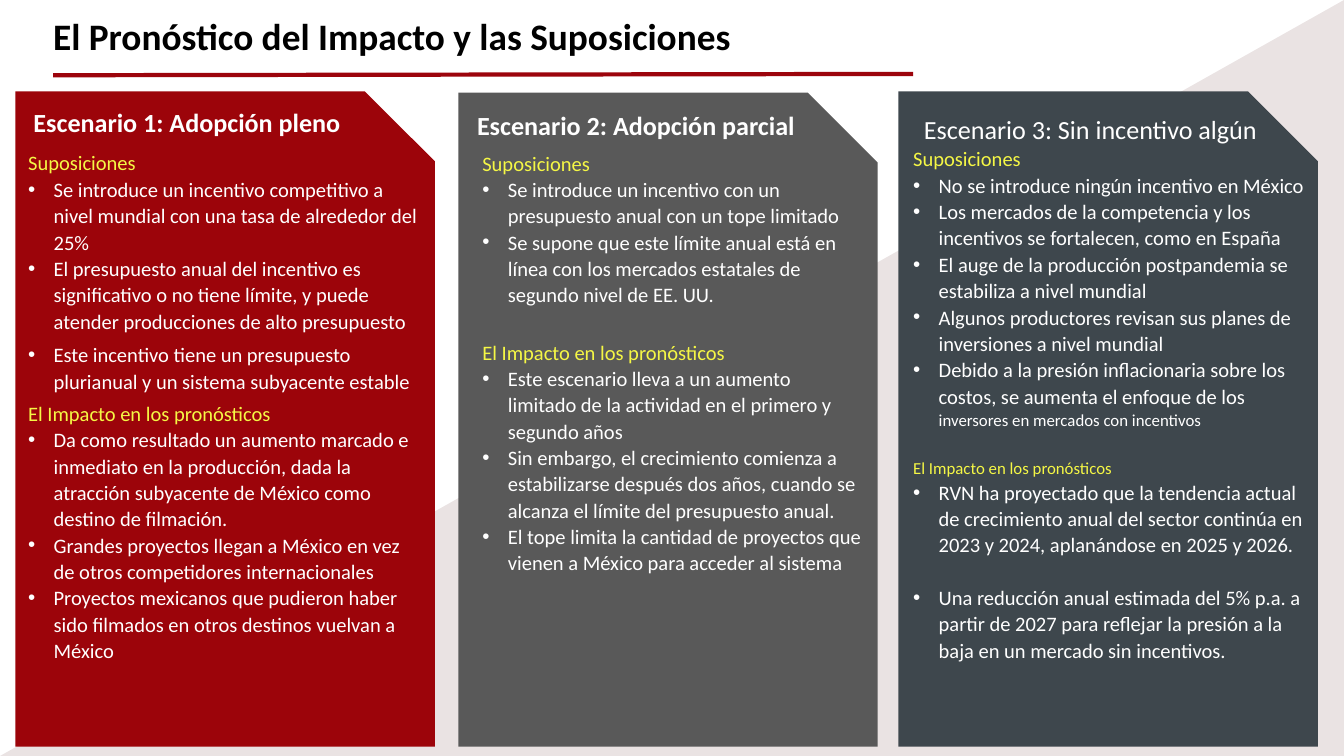
from lxml.etree import SubElement
from pptx import Presentation
from pptx.dml.color import RGBColor
from pptx.enum.shapes import MSO_CONNECTOR, MSO_SHAPE
from pptx.enum.text import MSO_ANCHOR, MSO_AUTO_SIZE, PP_ALIGN
from pptx.oxml.ns import qn
from pptx.util import Inches, Pt

THEME = {
    "font": "Calibri",
    "colors": {name: RGBColor.from_string(value) for name, value in {
        "black": "000000", "white": "FFFFFF", "yellow": "F5F745",
        "backdrop": "470103", "rule": "9C040C",
        "red": "9C040A", "gray": "595959", "slate": "3E474D"}.items()},
    "sizes": {"title": Pt(40), "heading": Pt(28), "body": Pt(22), "small": Pt(18)},
}
COLORS, SIZES = THEME["colors"], THEME["sizes"]


def add_text(box, inset, paragraphs):
    """Add a text box; each paragraph is (runs, paragraph format, bulleted),
    each run is (text, size, color, bold)."""
    tf = s.shapes.add_textbox(*map(Inches, box)).text_frame
    side, top = (Inches(0.1), Inches(0.05)) if inset else (0, 0)
    frame = {"word_wrap": True, "auto_size": MSO_AUTO_SIZE.SHAPE_TO_FIT_TEXT,
             "vertical_anchor": MSO_ANCHOR.TOP, "margin_left": side,
             "margin_right": side, "margin_top": top, "margin_bottom": top}
    for name, value in frame.items():
        setattr(tf, name, value)
    for i, (runs, fmt, bulleted) in enumerate(paragraphs):
        p = tf.add_paragraph() if i else tf.paragraphs[0]
        for name, value in fmt.items():
            setattr(p, name, value)
        if bulleted:
            pPr = p._p.get_or_add_pPr()
            pPr.set("marL", str(Inches(0.38)))
            pPr.set("indent", str(-Inches(0.38)))
            SubElement(pPr, qn("a:buFont")).set("typeface", "Arial")
            SubElement(pPr, qn("a:buChar")).set("char", "•")
        for text, size, color, bold in runs:
            r = p.add_run()
            r.text = text
            style = {"name": THEME["font"], "size": SIZES[size], "bold": bold}
            for name, value in style.items():
                setattr(r.font, name, value)
            r.font.color.rgb = COLORS[color]


def add_block(kind, box, color):
    sp = s.shapes.add_shape(kind, *map(Inches, box))
    sp.shadow.inherit = False
    sp.fill.solid()
    sp.fill.fore_color.rgb = COLORS[color]
    sp.line.fill.background()
    return sp


prs = Presentation()
prs.slide_width, prs.slide_height = Inches(20), Inches(11.25)
s = prs.slides.add_slide(prs.slide_layouts[6])

# Pale diagonal backdrop
sp = add_block(MSO_SHAPE.RIGHT_TRIANGLE, (0, 0, 20, 11.25), "backdrop")
sp._element.spPr.xfrm.set("flipH", "1")
clr = sp._element.spPr.find(qn("a:solidFill"))[0]
SubElement(clr, qn("a:alpha")).set("val", "11000")

# Title and rule
loose = {"line_spacing": 1.07, "space_after": Pt(8)}
add_text((0.79, 0.15, 14.13, 0.69), False,
         [([("El Pronóstico del Impacto y las Suposiciones", "title", "black", True)],
           loose, False)])
rule = s.shapes.add_connector(MSO_CONNECTOR.STRAIGHT, Inches(0.79), Inches(1.12),
                              Inches(13.59), Inches(1.1))
rule.line.width = Pt(4.5)
rule.line.color.rgb = COLORS["rule"]
SubElement(rule._element.spPr, qn("a:effectLst"))

# Scenarios: each body item is (text, points after it[, small-type ending])
ASSUMPTIONS = ("Suposiciones", "body")
IMPACT = ("El Impacto en los pronósticos", "body")
IMPACT_SMALL = (IMPACT[0], "small")
scenarios = [
    {"panel": (0.23, 1.36, 6.24, 9.75), "color": "red",
     "heading": "Escenario 1: Adopción pleno", "bold": True, "inset": True,
     "heading_box": (0.4, 1.54, 5.39, 0.57), "heading_fmt": {},
     "body_box": (0.32, 2.19, 6.02, 8.9),
     "sections": [
         (ASSUMPTIONS, [
             ("Se introduce un incentivo competitivo a nivel mundial con una tasa de alrededor del 25%", 0),
             ("El presupuesto anual del incentivo es significativo o no tiene límite, y puede atender producciones de alto presupuesto", 8),
             ("Este incentivo tiene un presupuesto plurianual y un sistema subyacente estable", 8)]),
         (IMPACT, [
             ("Da como resultado un aumento marcado e inmediato en la producción, dada la atracción subyacente de México como destino de filmación.", 0),
             ("Grandes proyectos llegan a México en vez de otros competidores internacionales", 0),
             ("Proyectos mexicanos que pudieron haber sido filmados en otros destinos vuelvan a México", 8)])]},
    {"panel": (6.82, 1.38, 6.24, 9.73), "color": "gray",
     "heading": "Escenario 2: Adopción parcial", "bold": True, "inset": True,
     "heading_box": (7, 1.55, 5.29, 0.58), "heading_fmt": loose,
     "body_box": (7.08, 2.19, 5.87, 8.49),
     "sections": [
         (ASSUMPTIONS, [
             ("Se introduce un incentivo con un presupuesto anual con un tope limitado", 0),
             ("Se supone que este límite anual está en línea con los mercados estatales de segundo nivel de EE. UU.", 35)]),
         (IMPACT, [
             ("Este escenario lleva a un aumento limitado de la actividad en el primero y segundo años", 0),
             ("Sin embargo, el crecimiento comienza a estabilizarse después dos años, cuando se alcanza el límite del presupuesto anual.", 0),
             ("El tope limita la cantidad de proyectos que vienen a México para acceder al sistema", 8)])]},
    {"panel": (13.37, 1.36, 6.24, 9.75), "color": "slate",
     "heading": "Escenario 3: Sin incentivo algún", "bold": False, "inset": False,
     "heading_box": (13.4, 1.61, 5.65, 0.55),
     "heading_fmt": {"alignment": PP_ALIGN.CENTER, "line_spacing": Pt(39.2)},
     "body_box": (13.49, 2.13, 6.19, 8.23),
     "sections": [
         (ASSUMPTIONS, [
             ("No se introduce ningún incentivo en México", 0),
             ("Los mercados de la competencia y los incentivos se fortalecen, como en España", 0),
             ("El auge de la producción postpandemia se estabiliza a nivel mundial", 0),
             ("Algunos productores revisan sus planes de inversiones a nivel mundial", 0),
             ("Debido a la presión inflacionaria sobre los costos, se aumenta el enfoque de los ", 30,
              "inversores en mercados con incentivos")]),
         (IMPACT_SMALL, [
             ("RVN ha proyectado que la tendencia actual de crecimiento anual del sector continúa en 2023 y 2024, aplanándose en 2025 y 2026.", 28),
             ("Una reducción anual estimada del 5% p.a. a partir de 2027 para reflejar la presión a la baja en un mercado sin incentivos.", 0)])]},
]

for sc in scenarios:
    add_block(MSO_SHAPE.SNIP_1_RECTANGLE, sc["panel"], sc["color"])
    add_text(sc["heading_box"], sc["inset"],
             [([(sc["heading"], "heading", "white", sc["bold"])],
               sc["heading_fmt"], False)])
    body = []
    for (label, size), items in sc["sections"]:
        body.append(([(label, size, "yellow", False)], {}, False))
        for text, after, *endings in items:
            runs = [(text, "body", "white", False)]
            runs += [(ending, "small", "white", False) for ending in endings]
            body.append((runs, {"line_spacing": 1.07, "space_after": Pt(after)}, True))
    add_text(sc["body_box"], True, body)

prs.save("out.pptx")
